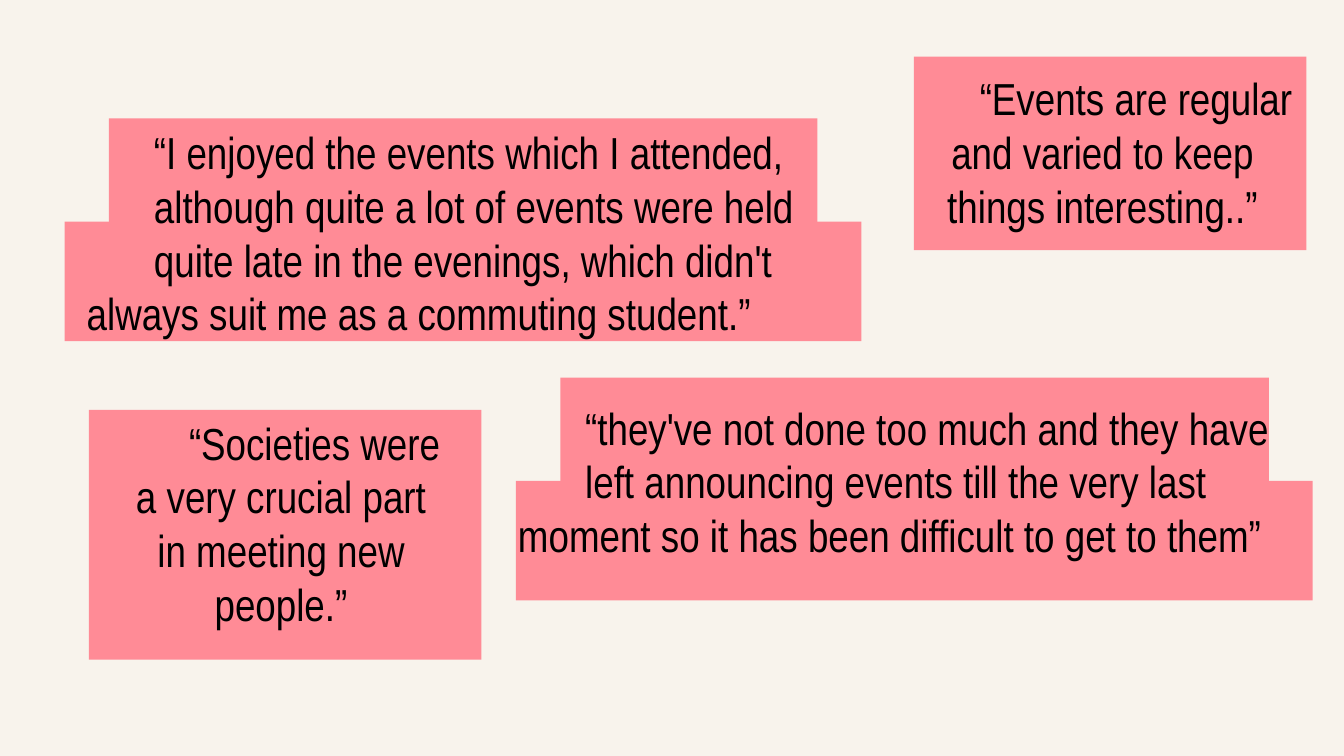
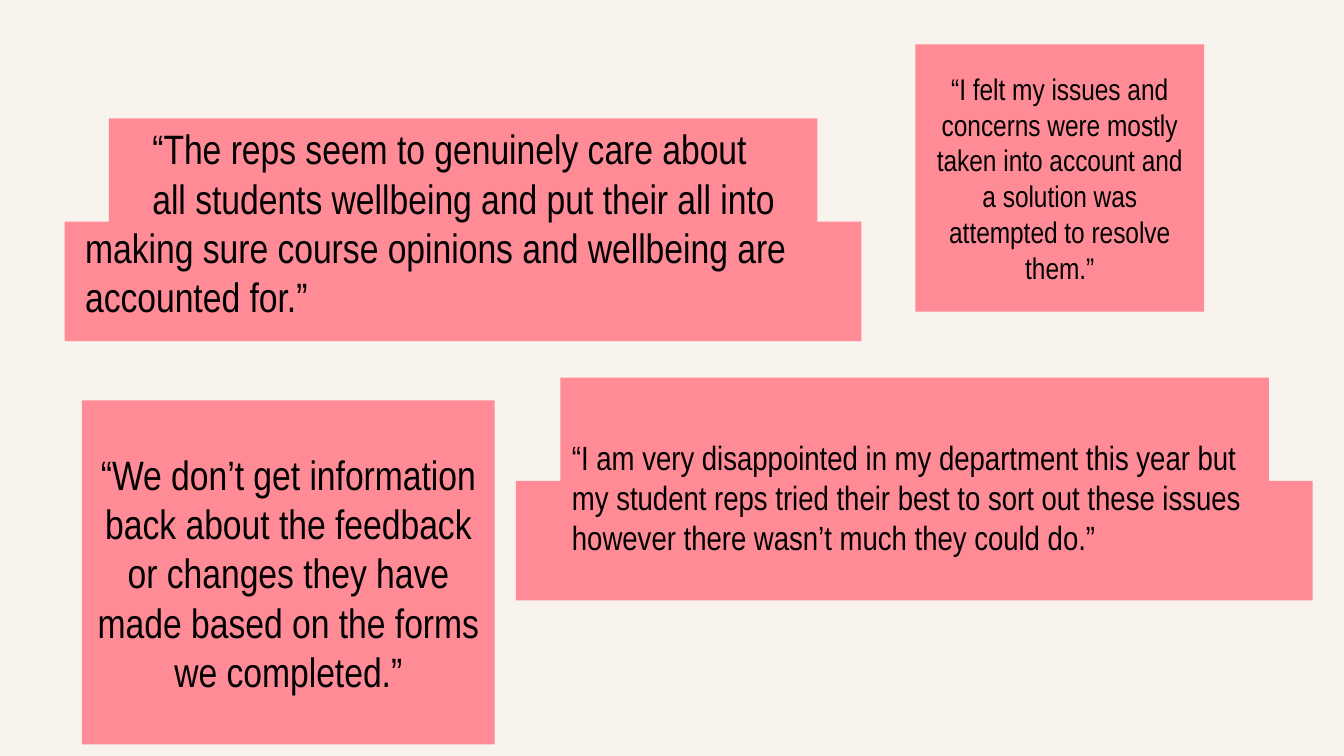
from dataclasses import dataclass

from pptx import Presentation
from pptx.dml.color import RGBColor
from pptx.enum.shapes import MSO_SHAPE
from pptx.enum.text import MSO_ANCHOR, MSO_AUTO_SIZE, PP_ALIGN
from pptx.slide import Slide
from pptx.text.text import TextFrame
from pptx.util import Cm, Pt

RECT = MSO_SHAPE.RECTANGLE
LEFT, CENTER = PP_ALIGN.LEFT, PP_ALIGN.CENTER
MIDDLE = MSO_ANCHOR.MIDDLE
GROW = MSO_AUTO_SIZE.SHAPE_TO_FIT_TEXT

COLORS = {"page": "F8F3EC", "panel": "FF8B96", "text": "000000"}
FONT = "Arial Narrow"
FIRST_LINE = Cm(1.27)
BAND_HEIGHT = 2.26


@dataclass(frozen=True)
class Box:
    x: float
    y: float
    w: float
    h: float

    def lengths(self) -> tuple[Cm, Cm, Cm, Cm]:
        return Cm(self.x), Cm(self.y), Cm(self.w), Cm(self.h)


@dataclass(frozen=True)
class Quote:
    box: Box
    size: int
    lines: tuple[str, ...]
    align: PP_ALIGN = LEFT


@dataclass(frozen=True)
class Card:
    box: Box
    quote: Quote


def stepped_panel(x: float, y: float) -> tuple[Box, Box]:
    return (Box(x, y, 13.39, BAND_HEIGHT),
            Box(x - 0.84, y + 1.95, 15.06, BAND_HEIGHT))


STEPPED_PANELS = stepped_panel(10.59, 7.14) + stepped_panel(2.06, 2.24)

EVENT_QUOTES = (
    Quote(Box(9.6, 7.47, 14.88, 3.28), 24, (
        "“they've not done too much and they have",
        "left announcing events till the very last moment so it has been "
        "difficult to get to them”",
    )),
    Quote(Box(1.45, 2.26, 14.88, 4.29), 24, (
        "“I enjoyed the events which I attended,",
        "although quite a lot of events were held",
        "quite late in the evenings, which didn't always suit me as a "
        "commuting student.”",
    )),
)
EVENT_CARDS = (
    Card(Box(1.68, 7.75, 7.42, 4.72), Quote(Box(2.06, 7.75, 6.5, 4.29), 24, (
        "“Societies were a very crucial part in meeting new people.”",
    ), CENTER)),
    Card(Box(17.27, 1.07, 7.42, 3.66), Quote(Box(17.04, 1.24, 7.59, 3.28), 24, (
        "“Events are regular and varied to keep things interesting..”",
    ), CENTER)),
)
REP_QUOTES = (
    Quote(Box(9.35, 8.15, 14.88, 2.49), 18, (
        "“I am very disappointed in my department this year but",
        "my student reps tried their best to sort out these issues",
        "however there wasn’t much they could do.”",
    )),
    Quote(Box(1.42, 2.24, 14.88, 3.96), 22, (
        "“The reps seem to genuinely care about",
        "all students wellbeing and put their all into making sure course "
        "opinions and wellbeing are accounted for.”",
    )),
)
REP_PANELS = (
    Quote(Box(17.3, 0.84, 5.46, 5.05), 16, (
        "“I felt my issues and concerns were mostly taken into account and "
        "a solution was attempted to resolve them.”",
    ), CENTER),
    Quote(Box(1.55, 7.57, 7.8, 6.5), 22, (
        "“We don’t get information back about the feedback or changes they "
        "have made based on the forms we completed.”",
    ), CENTER),
)


def rgb(name: str) -> RGBColor:
    return RGBColor.from_string(COLORS[name])


def write_quote(tf: TextFrame, quote: Quote, indent: int = 0) -> None:
    tf.word_wrap = True
    for i, line in enumerate(quote.lines):
        p = tf.add_paragraph() if i else tf.paragraphs[0]
        p.text = line
        p.alignment = quote.align
        pPr = p._p.get_or_add_pPr()
        pPr.set("marL", "0")
        pPr.set("indent", str(indent))
        p.font.name = FONT
        p.font.size = Pt(quote.size)
        p.font.color.rgb = rgb("text")


def add_panel(s: Slide, box: Box) -> TextFrame:
    sp = s.shapes.add_shape(RECT, *box.lengths())
    sp.shadow.inherit = False
    sp.fill.solid()
    sp.fill.fore_color.rgb = rgb("panel")
    sp.line.fill.background()
    return sp.text_frame


def add_quote(s: Slide, quote: Quote) -> None:
    tf = s.shapes.add_textbox(*quote.box.lengths()).text_frame
    tf.margin_left = tf.margin_right = Cm(0.19)
    tf.margin_top = tf.margin_bottom = Cm(0.1)
    tf.auto_size = GROW
    write_quote(tf, quote, FIRST_LINE)


def add_card(s: Slide, card: Card) -> None:
    add_panel(s, card.box)
    add_quote(s, card.quote)


def add_quote_panel(s: Slide, quote: Quote) -> None:
    tf = add_panel(s, quote.box)
    tf.vertical_anchor = MIDDLE
    write_quote(tf, quote)


def add_quote_slide(prs: Presentation, quotes: tuple[Quote, ...]) -> Slide:
    s = prs.slides.add_slide(prs.slide_layouts[6])
    s.background.fill.solid()
    s.background.fill.fore_color.rgb = rgb("page")
    for box in STEPPED_PANELS:
        add_panel(s, box)
    for quote in quotes:
        add_quote(s, quote)
    return s


def main() -> None:
    prs = Presentation()
    prs.slide_width, prs.slide_height = Cm(25.4), Cm(14.29)

    events = add_quote_slide(prs, EVENT_QUOTES)
    for card in EVENT_CARDS:
        add_card(events, card)

    reps = add_quote_slide(prs, REP_QUOTES)
    for quote in REP_PANELS:
        add_quote_panel(reps, quote)

    prs.save("out.pptx")


if __name__ == "__main__":
    main()
